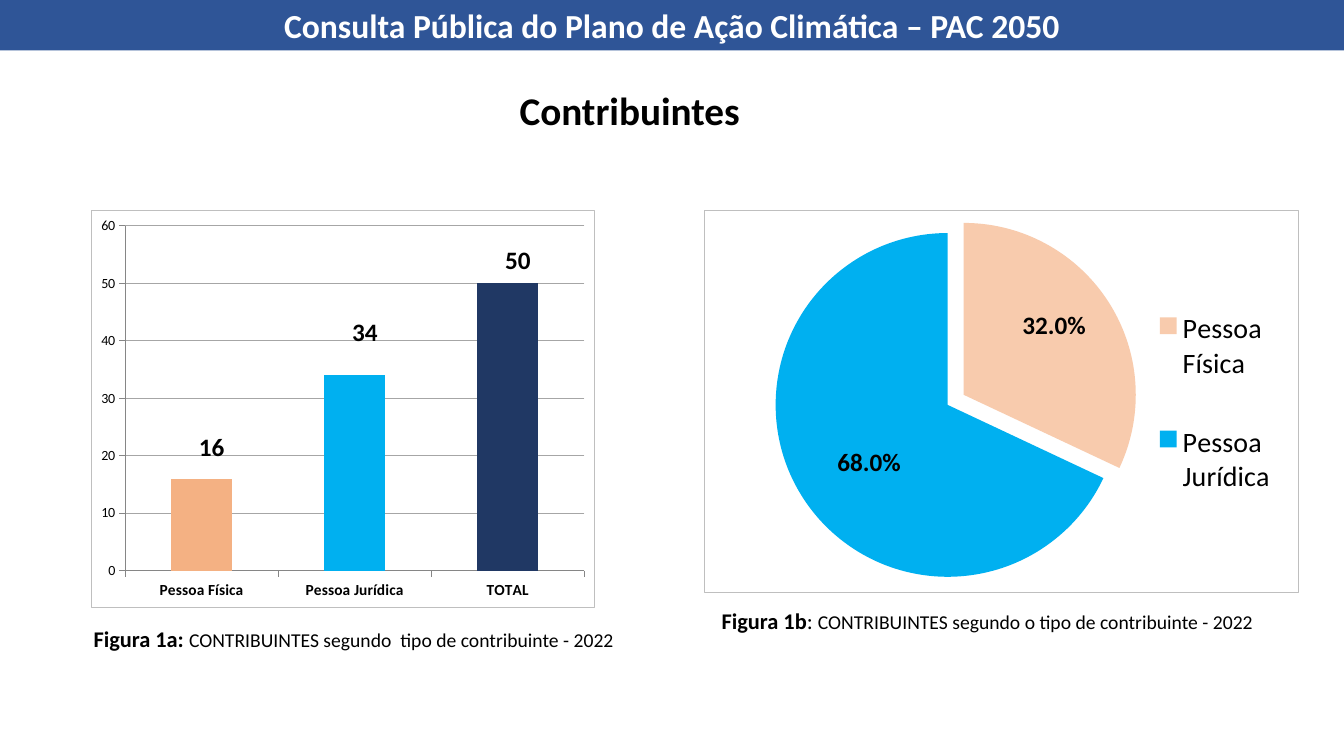
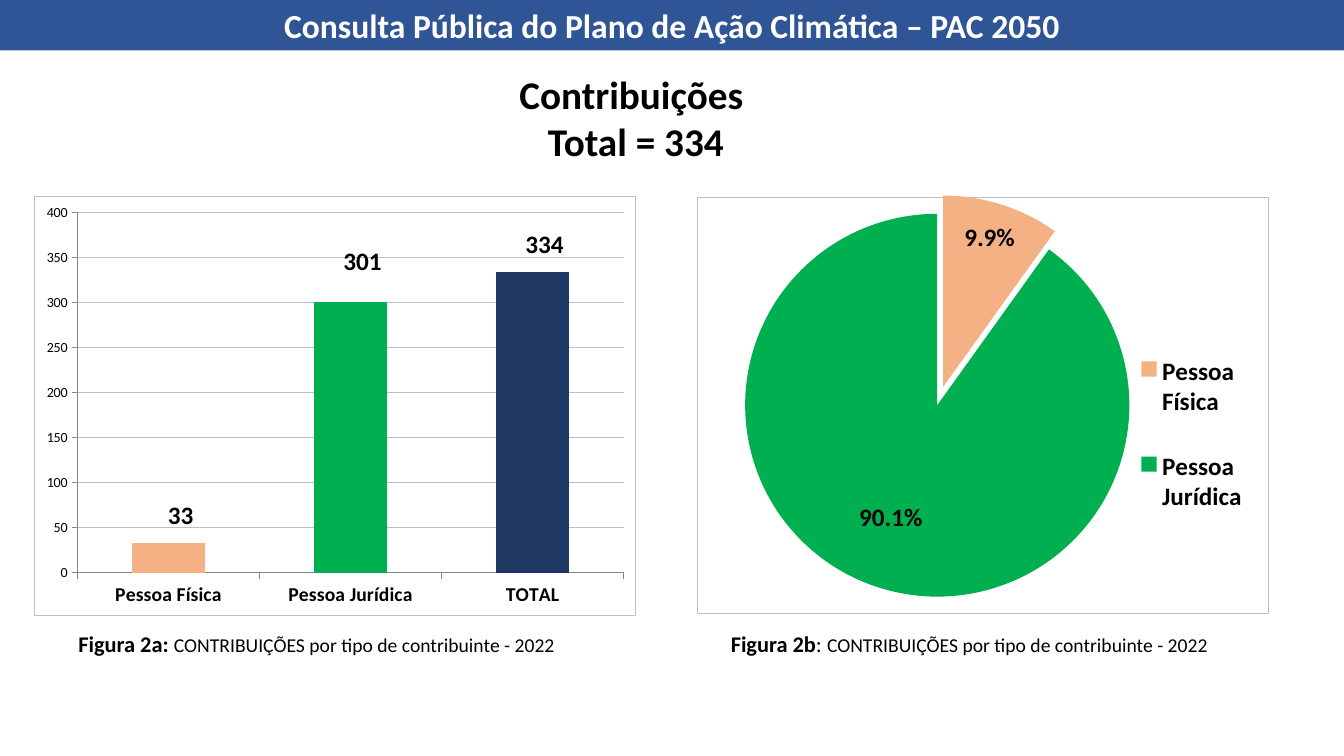
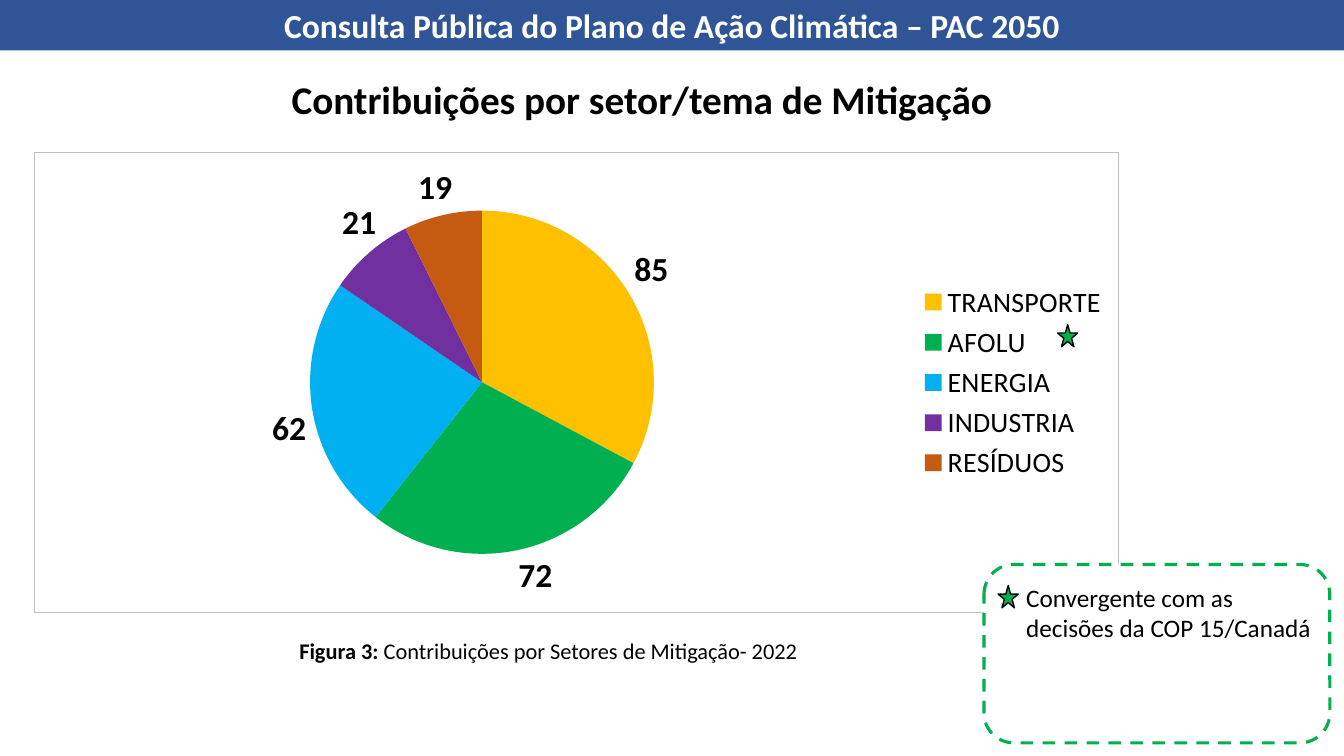
from dataclasses import dataclass

from lxml import etree
from pptx import Presentation
from pptx.chart.chart import Chart
from pptx.chart.data import CategoryChartData
from pptx.dml.color import RGBColor
from pptx.enum.chart import XL_CHART_TYPE, XL_LABEL_POSITION, XL_LEGEND_POSITION, XL_TICK_MARK
from pptx.enum.dml import MSO_LINE
from pptx.enum.shapes import MSO_SHAPE
from pptx.enum.text import MSO_ANCHOR, MSO_AUTO_SIZE, PP_ALIGN
from pptx.oxml import parse_xml
from pptx.oxml.ns import nsdecls, qn
from pptx.shapes.autoshape import Shape
from pptx.slide import Slide
from pptx.util import Inches, Pt

RECT, ROUNDED, STAR = MSO_SHAPE.RECTANGLE, MSO_SHAPE.ROUNDED_RECTANGLE, MSO_SHAPE.STAR_5_POINT
COLUMN, PIE = XL_CHART_TYPE.COLUMN_CLUSTERED, XL_CHART_TYPE.PIE
OUTSIDE, CENTER = XL_LABEL_POSITION.OUTSIDE_END, XL_LABEL_POSITION.CENTER

FONT = "Calibri"
COLORS = {
    "band": "2F5597", "white": "FFFFFF", "black": "000000",
    "border": "BFBFBF", "grid": "A6A6A6", "axis": "868686",
    "peach": "F4B183", "light_peach": "F8CBAD", "sky": "00B0F0", "green": "00B050",
    "navy": "203864", "amber": "FFC000", "purple": "7030A0", "rust": "C55A11",
}
BAND_TEXT = "Consulta Pública do Plano de Ação Climática – PAC 2050"
PERSON_TYPES = ("Pessoa Física", "Pessoa Jurídica")

Box = tuple[float, float, float, float]


@dataclass(frozen=True)
class Part:
    """A stretch of text with its own format."""
    text: str
    size: float
    bold: bool = False
    color: str = "black"


@dataclass(frozen=True)
class ChartSpec:
    """What the column and pie charts have in common."""
    box: Box
    categories: tuple[str, ...]
    values: tuple[float, ...]
    colors: tuple[str, ...]
    label_size: float = 18
    label_shifts: tuple[tuple[float, float], ...] = ()


@dataclass(frozen=True)
class ColumnSpec(ChartSpec):
    maximum: float = 60
    step: float = 10
    category_size: float = 11
    grid: str = "grid"


@dataclass(frozen=True)
class PieSpec(ChartSpec):
    percent: bool = False
    explosion: int = 0
    legend_size: float = 20
    legend_bold: bool = False
    plot_box: Box | None = None
    legend_box: Box | None = None


def rgb(name: str) -> RGBColor:
    return RGBColor.from_string(COLORS[name])


# Text and shapes
def write(shape: Shape, lines: list[list[Part]], align: PP_ALIGN = PP_ALIGN.LEFT) -> None:
    frame = shape.text_frame
    frame.word_wrap = True
    frame.auto_size = MSO_AUTO_SIZE.SHAPE_TO_FIT_TEXT
    frame.vertical_anchor = MSO_ANCHOR.TOP
    for index, parts in enumerate(lines):
        paragraph = frame.add_paragraph() if index else frame.paragraphs[0]
        paragraph.alignment = align
        for part in parts:
            run = paragraph.add_run()
            run.text = part.text
            run.font.name = FONT
            run.font.size = Pt(part.size)
            run.font.bold = part.bold
            run.font.color.rgb = rgb(part.color)


def add_text(slide: Slide, box: Box, lines: list[list[Part]],
             align: PP_ALIGN = PP_ALIGN.LEFT) -> None:
    write(slide.shapes.add_textbox(*map(Inches, box)), lines, align)


def add_figure(slide: Slide, kind: MSO_SHAPE, box: Box, fill: str,
               line: str | None = None, width: float = 1) -> Shape:
    figure = slide.shapes.add_shape(kind, *map(Inches, box))
    figure.shadow.inherit = False
    figure.fill.solid()
    figure.fill.fore_color.rgb = rgb(fill)
    if line:
        figure.line.color.rgb = rgb(line)
        figure.line.width = Pt(width)
    else:
        figure.line.fill.background()
    return figure


def add_star(slide: Slide, left: float, top: float) -> None:
    add_figure(slide, STAR, (left, top, 0.2, 0.22), "green", "black")


def add_caption(slide: Slide, box: Box, *parts: Part) -> None:
    add_text(slide, box, [list(parts)])


def start_slide(deck: Presentation, title_box: Box, *title_lines: str) -> Slide:
    slide = deck.slides.add_slide(deck.slide_layouts[6])
    band = add_figure(slide, RECT, (0, 0, 13.33, 0.5), "band")
    write(band, [[Part(BAND_TEXT, 24, True, "white")]], PP_ALIGN.CENTER)
    add_text(slide, title_box, [[Part(line, 28, True)] for line in title_lines], PP_ALIGN.CENTER)
    return slide


# Chart XML that python-pptx does not reach
def layout_xml(box: tuple[float, ...], target: str = "") -> etree._Element:
    inner = f'<c:layoutTarget val="{target}"/>' if target else ""
    if len(box) == 4:
        inner += '<c:xMode val="edge"/><c:yMode val="edge"/>'
    inner += "".join(f'<c:{key} val="{value}"/>' for key, value in zip("xywh", box))
    return parse_xml(f'<c:layout {nsdecls("c")}><c:manualLayout>{inner}'
                     "</c:manualLayout></c:layout>")


def set_layout(parent: etree._Element, layout: etree._Element, after: str | None) -> None:
    for old in parent.findall(qn("c:layout")):
        parent.remove(old)
    if after:
        parent.find(qn(after)).addnext(layout)
    else:
        parent.insert(0, layout)


def add_border(chart: Chart) -> None:
    border = parse_xml(
        f'<c:spPr {nsdecls("c", "a")}>'
        f'<a:solidFill><a:srgbClr val="{COLORS["white"]}"/></a:solidFill>'
        f'<a:ln w="{Pt(0.75)}"><a:solidFill><a:srgbClr val="{COLORS["border"]}"/>'
        "</a:solidFill></a:ln></c:spPr>")
    chart.element.find(qn("c:chart")).addnext(border)


def hide_leader_lines(chart: Chart) -> None:
    for leader in chart.element.iter(qn("c:showLeaderLines")):
        leader.set("val", "0")
    for labels in chart.element.iter(qn("c:dLbls")):
        labels.append(parse_xml(
            f'<c:extLst {nsdecls("c")}><c:ext uri="{{CE6537A1-D6FC-4f65-9D91-7224C49458BB}}" '
            'xmlns:c15="http://schemas.microsoft.com/office/drawing/2012/chart">'
            '<c15:showLeaderLines val="0"/></c:ext></c:extLst>'))


def shift_labels(chart: Chart, spec: ChartSpec, percent: bool) -> None:
    for label, shift in zip(chart.element.iter(qn("c:dLbl")), spec.label_shifts):
        set_layout(label, layout_xml(shift), "c:idx")
        if percent:
            label.find(qn("c:layout")).addnext(parse_xml(
                f'<c:numFmt {nsdecls("c")} formatCode="0.0%" sourceLinked="0"/>'))
            label.find(qn("c:showVal")).set("val", "0")
            label.find(qn("c:showPercent")).set("val", "1")


# Charts
def add_chart(slide: Slide, kind: XL_CHART_TYPE, spec: ChartSpec, percent: bool = False) -> Chart:
    data = CategoryChartData()
    data.categories = spec.categories
    data.add_series("Series 1", spec.values)
    chart = slide.shapes.add_chart(kind, *map(Inches, spec.box), data).chart
    chart.has_title = False
    chart.has_legend = False
    chart.font.name = FONT
    chart.font.size = Pt(10)
    chart.font.color.rgb = rgb("black")
    add_border(chart)

    plot = chart.plots[0]
    plot.vary_by_categories = kind == PIE
    series = plot.series[0]
    position = CENTER if percent else OUTSIDE
    labels = series.data_labels
    labels.show_value = not percent
    labels.show_percentage = percent
    labels.position = position
    label_fonts = [labels.font]
    for index, color in enumerate(spec.colors):
        point = series.points[index]
        point.format.fill.solid()
        point.format.fill.fore_color.rgb = rgb(color)
        if spec.label_shifts:
            point.data_label.position = position
            label_fonts.append(point.data_label.font)
    for font in label_fonts:
        font.name = FONT
        font.size = Pt(spec.label_size)
        font.bold = True
        font.color.rgb = rgb("black")
    shift_labels(chart, spec, percent)
    hide_leader_lines(chart)
    return chart


def add_columns(slide: Slide, spec: ColumnSpec) -> None:
    chart = add_chart(slide, COLUMN, spec)
    chart.plots[0].gap_width = 150
    for axis in (chart.category_axis, chart.value_axis):
        axis.major_tick_mark = XL_TICK_MARK.OUTSIDE
        axis.minor_tick_mark = XL_TICK_MARK.NONE
        axis.format.line.color.rgb = rgb("axis")
    chart.category_axis.tick_labels.font.size = Pt(spec.category_size)
    chart.category_axis.tick_labels.font.bold = True
    scale = chart.value_axis
    scale.minimum_scale, scale.maximum_scale, scale.major_unit = 0, spec.maximum, spec.step
    scale.major_gridlines.format.line.color.rgb = rgb(spec.grid)
    scale.major_gridlines.format.line.width = Pt(0.75)


def add_pie(slide: Slide, spec: PieSpec) -> None:
    chart = add_chart(slide, PIE, spec, spec.percent)
    chart.has_legend = True
    legend = chart.legend
    legend.position = XL_LEGEND_POSITION.RIGHT
    legend.include_in_layout = False
    legend.font.name = FONT
    legend.font.size = Pt(spec.legend_size)
    legend.font.bold = spec.legend_bold
    legend.font.color.rgb = rgb("black")
    if spec.legend_box:
        set_layout(next(chart.element.iter(qn("c:legend"))),
                   layout_xml(spec.legend_box), "c:legendPos")
    if spec.plot_box:
        set_layout(next(chart.element.iter(qn("c:plotArea"))),
                   layout_xml(spec.plot_box, "inner"), None)
    if spec.explosion:
        first_slice = next(chart.element.iter(qn("c:dPt")))
        first_slice.find(qn("c:spPr")).addprevious(
            parse_xml(f'<c:explosion {nsdecls("c")} val="{spec.explosion}"/>'))


# Slides
def build_contributors(deck: Presentation) -> None:
    slide = start_slide(deck, (2.65, 0.81, 7.19, 0.57), "Contribuintes")
    add_caption(slide, (7.06, 5.97, 5.9, 0.37), Part("Figura 1b", 16, True), Part(": ", 16),
                Part("CONTRIBUINTES segundo o tipo de contribuinte - 2022", 14))
    add_caption(slide, (0.83, 6.15, 5.44, 0.37), Part("Figura 1a: ", 16, True),
                Part("CONTRIBUINTES segundo  tipo de contribuinte - 2022", 14))
    add_columns(slide, ColumnSpec(
        (0.9, 2.08, 5, 3.95), (*PERSON_TYPES, "TOTAL"), (16, 34, 50), ("peach", "sky", "navy"),
        label_shifts=((0.02, -0.03), (0.02, -0.06), (0.02, -0.01))))
    add_pie(slide, PieSpec(
        (6.98, 2.08, 5.9, 3.8), PERSON_TYPES, (32, 68), ("light_peach", "sky"),
        label_shifts=((0.03, -0.06), (-0.01, 0.03)), percent=True, explosion=11,
        plot_box=(0, 0.06, 0.82, 0.9), legend_box=(0.75, 0.15, 0.22, 0.71)))


def build_contributions(deck: Presentation) -> None:
    slide = start_slide(deck, (2.71, 0.65, 7.19, 1.04), "Contribuições ", "Total = 334")
    add_caption(slide, (7.15, 6.2, 5.33, 0.37), Part("Figura 2b", 16, True), Part(": ", 16),
                Part("CONTRIBUIÇÕES por tipo de contribuinte - 2022", 14))
    add_caption(slide, (0.68, 6.2, 5.1, 0.37), Part("Figura 2a: ", 16, True),
                Part("CONTRIBUIÇÕES por tipo de contribuinte - 2022", 14))
    add_columns(slide, ColumnSpec(
        (0.34, 1.94, 5.97, 4.17), (*PERSON_TYPES, "TOTAL"), (33, 301, 334),
        ("peach", "green", "navy"), label_shifts=((0.02, -0.02), (0.02, -0.05), (0.02, -0.02)),
        maximum=400, step=50, category_size=14, grid="border"))
    add_pie(slide, PieSpec(
        (6.91, 1.94, 5.68, 4.15), PERSON_TYPES, (33, 301), ("peach", "green"),
        label_shifts=((0.03, -0.14), (-0.03, 0.05)), percent=True, explosion=10,
        legend_size=18, legend_bold=True,
        plot_box=(0, 0.04, 0.84, 0.92), legend_box=(0.76, 0.3, 0.21, 0.54)))


def build_sectors(deck: Presentation) -> None:
    slide = start_slide(deck, (2.77, 0.7, 7.19, 0.57), "Contribuições por setor/tema de Mitigação")
    add_caption(slide, (2.87, 6.27, 5.71, 0.37), Part("Figura 3: ", 16, True),
                Part("Contribuições por Setores de Mitigação- 2022", 16))
    add_pie(slide, PieSpec(
        (0.34, 1.51, 10.76, 4.57), ("TRANSPORTE", "AFOLU", "ENERGIA", "INDUSTRIA", "RESÍDUOS"),
        (85, 72, 62, 21, 19), ("amber", "green", "sky", "purple", "rust"), label_size=24,
        label_shifts=((0, 0), (0, 0), (0, 0), (0.01, -0.01), (0.01, 0))))
    add_star(slide, 10.49, 3.22)
    # Key to the star
    key_frame = add_figure(slide, ROUNDED, (9.76, 5.6, 3.43, 1.77), "white", "green", 2.25)
    key_frame.line.dash_style = MSO_LINE.DASH
    key = add_figure(slide, RECT, (10.08, 5.73, 3.03, 0.71), "white")
    write(key, [[Part("Convergente com as decisões da COP 15/Canadá", 18)]])
    add_star(slide, 9.9, 5.81)


def main() -> None:
    deck = Presentation()
    deck.slide_width, deck.slide_height = Inches(13.33), Inches(7.5)
    build_contributors(deck)
    build_contributions(deck)
    build_sectors(deck)
    deck.save("out.pptx")


if __name__ == "__main__":
    main()
